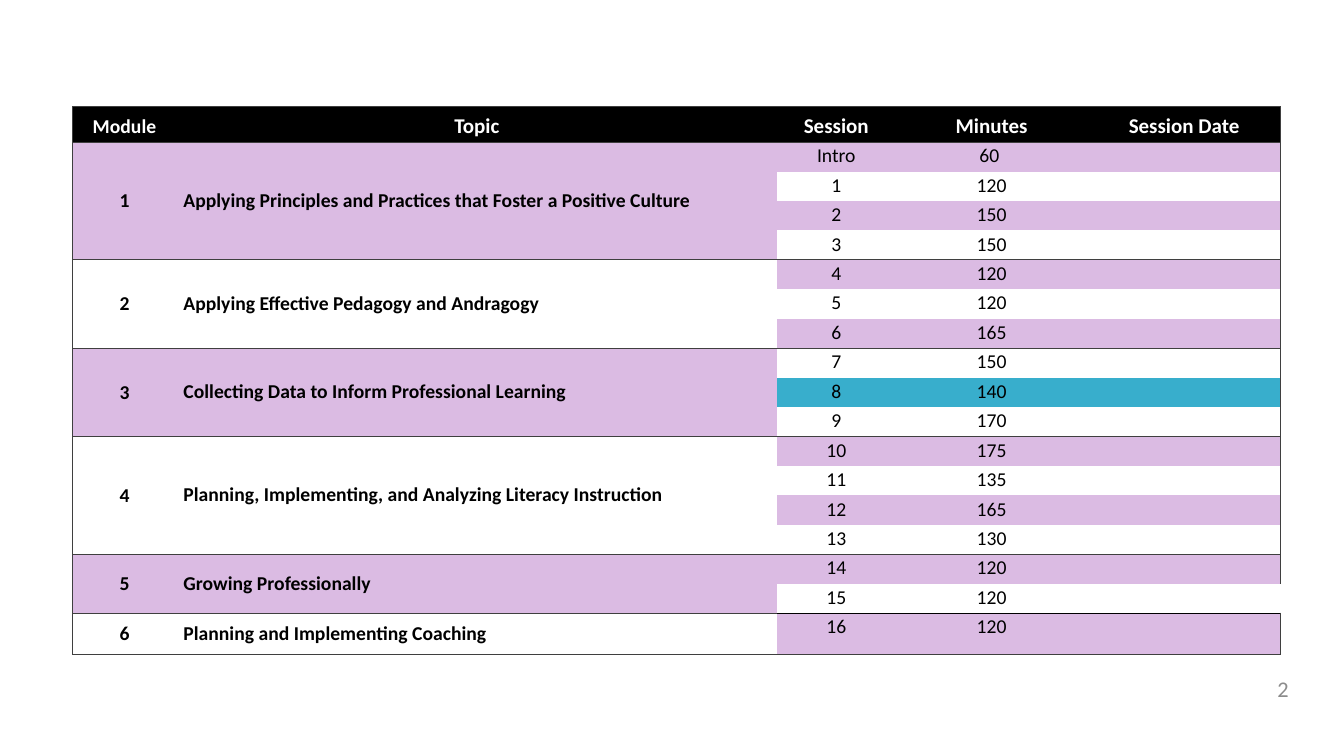
from dataclasses import dataclass

from lxml import etree
from pptx import Presentation
from pptx.dml.color import RGBColor
from pptx.enum.text import MSO_ANCHOR, PP_ALIGN
from pptx.oxml.ns import qn
from pptx.util import Inches, Pt

CENTER, LEFT, RIGHT = PP_ALIGN.CENTER, PP_ALIGN.LEFT, PP_ALIGN.RIGHT
TOP, MIDDLE, BOTTOM = MSO_ANCHOR.TOP, MSO_ANCHOR.MIDDLE, MSO_ANCHOR.BOTTOM

COLORS = {
    "black": "000000",
    "white": "FFFFFF",
    "lavender": "DBBBE3",
    "teal": "38AECC",
    "rule": "3F3F3F",
    "page_number": "8C8C8C",
}
FONT = "Calibri"
NO_STYLE = "{2D5ABB26-0587-4C30-8999-92F81FD0307C}"

TABLE_LEFT, TABLE_TOP, TABLE_HEIGHT = 0.72, 1.06, 5.44
COLUMN_WIDTHS = [1.03, 5.96, 1.17, 1.91, 1.91]
HEADER_HEIGHT, LAST_HEIGHT = 0.35, 0.41
HEADINGS = ["Module", "Topic", "Session", "Minutes", "Session Date"]
HIGHLIGHTED_SESSION = "8"


@dataclass
class Module:
    topic: str
    sessions: list[tuple[str, str]]


@dataclass
class CellStyle:
    fill: str
    color: str = "black"
    size: int = 14
    bold: bool = False
    align: PP_ALIGN = CENTER
    anchor: MSO_ANCHOR = TOP
    side: float = 0.06
    margin_top: float = 0.02
    margin_bottom: float = 0.03


MODULES = [
    Module("Applying Principles and Practices that Foster a Positive Culture",
           [("Intro", "60 "), ("1", "120"), ("2", "150"), ("3", "150")]),
    Module("Applying Effective Pedagogy and Andragogy",
           [("4", "120"), ("5", "120"), ("6", "165")]),
    Module("Collecting Data to Inform Professional Learning",
           [("7", "150"), ("8", "140"), ("9", "170")]),
    Module("Planning, Implementing, and Analyzing Literacy Instruction",
           [("10", "175"), ("11", "135"), ("12", "165"), ("13", "130")]),
    Module("Growing Professionally", [("14", "120"), ("15", "120")]),
    Module("Planning and Implementing Coaching", [("16", "120")]),
]


def rgb(name: str) -> RGBColor:
    return RGBColor.from_string(COLORS[name])


def format_span(span, size: int, color: str, bold: bool) -> None:
    for name, value in {"name": FONT, "size": Pt(size), "bold": bold}.items():
        setattr(span.font, name, value)
    span.font.color.rgb = rgb(color)


def set_borders(cell, edges: dict[str, str]) -> None:
    properties = cell._tc.get_or_add_tcPr()
    for edge in "LRTB":
        line = etree.SubElement(properties, qn(f"a:ln{edge}"), w=str(Pt(1)))
        if edge in edges:
            fill = etree.SubElement(line, qn("a:solidFill"))
            etree.SubElement(fill, qn("a:srgbClr"), val=COLORS[edges[edge]])
        else:
            etree.SubElement(line, qn("a:noFill"))


def fill_cell(cell, text: str, style: CellStyle, edges: dict[str, str]) -> None:
    set_borders(cell, edges)
    cell.fill.solid()
    cell.fill.fore_color.rgb = rgb(style.fill)
    layout = {
        "vertical_anchor": style.anchor,
        "margin_left": Inches(style.side),
        "margin_right": Inches(style.side),
        "margin_top": Inches(style.margin_top),
        "margin_bottom": Inches(style.margin_bottom),
    }
    for name, value in layout.items():
        setattr(cell, name, value)
    para = cell.text_frame.paragraphs[0]
    para.alignment = style.align
    if text:
        span = para.add_run()
        span.text = text
        format_span(span, style.size, style.color, style.bold)
    else:
        # Keeps an empty cell from stretching its row
        etree.SubElement(para._p, qn("a:endParaRPr"), sz=str(style.size * 100))


def frame_edges(column: int, first: bool, last: bool) -> dict[str, str]:
    present = {"L": column == 0, "R": column == len(HEADINGS) - 1, "T": first, "B": last}
    return {edge: "rule" for edge, shown in present.items() if shown}


def add_header(table) -> None:
    for column, heading in enumerate(HEADINGS):
        style = CellStyle("black", "white", 14 if column == 0 else 15, True, anchor=BOTTOM)
        fill_cell(table.cell(0, column), heading, style, frame_edges(column, True, True))


def add_module(table, number: int, module: Module, start: int) -> None:
    count = len(module.sessions)
    band = "lavender" if number in (1, 3, 5) else "white"
    label_styles = [
        CellStyle(band, bold=True, anchor=MIDDLE, side=0.07, margin_top=0, margin_bottom=0),
        CellStyle(band, bold=True, align=LEFT, anchor=MIDDLE, side=0.07),
    ]
    for offset, (session, minutes) in enumerate(module.sessions):
        row = start + offset
        first, last = offset == 0, offset == count - 1
        # Module number and topic
        labels = [str(number), module.topic] if first else ["", ""]
        for column, (text, style) in enumerate(zip(labels, label_styles)):
            edges = frame_edges(column, first, first or last)
            fill_cell(table.cell(row, column), text, style, edges)
        # Session details
        shade = "lavender" if row % 2 else "white"
        style = CellStyle("teal" if session == HIGHLIGHTED_SESSION else shade)
        for column, text in enumerate([session, minutes, ""], start=2):
            edges = frame_edges(column, first, last)
            if session == "15":
                edges = {"B": "black"}
            elif session == "16":
                edges["T"] = "black"
            fill_cell(table.cell(row, column), text, style, edges)
    if count > 1:
        for column in range(2):
            table.cell(start, column).merge(table.cell(start + count - 1, column))


def add_schedule(page) -> None:
    session_count = sum(len(module.sessions) for module in MODULES)
    frame = page.shapes.add_table(
        session_count + 1, len(HEADINGS), Inches(TABLE_LEFT), Inches(TABLE_TOP),
        Inches(sum(COLUMN_WIDTHS)), Inches(TABLE_HEIGHT))
    table = frame.table
    table.horz_banding = False
    for style_id in table._tbl.iter(qn("a:tableStyleId")):
        style_id.text = NO_STYLE

    # Column widths and row heights
    for column, width in zip(table.columns, COLUMN_WIDTHS):
        column.width = Inches(width)
    middle_count = session_count - 1
    row_height = (TABLE_HEIGHT - HEADER_HEIGHT - LAST_HEIGHT) / middle_count
    heights = [HEADER_HEIGHT] + [row_height] * middle_count + [LAST_HEIGHT]
    for row, height in zip(table.rows, heights):
        row.height = Inches(height)

    add_header(table)
    start = 1
    for number, module in enumerate(MODULES, start=1):
        add_module(table, number, module, start)
        start += len(module.sessions)


def add_page_number(page) -> None:
    box = page.shapes.add_textbox(Inches(10.55), Inches(6.68), Inches(2.33), Inches(0.3))
    box.text_frame.word_wrap = True
    box.text_frame.vertical_anchor = MIDDLE
    para = box.text_frame.paragraphs[0]
    para.alignment = RIGHT
    span = para.add_run()
    span.text = "2"
    format_span(span, 16, "page_number", False)


def main() -> None:
    deck = Presentation()
    deck.slide_width, deck.slide_height = Inches(13.33), Inches(7.5)
    page = deck.slides.add_slide(deck.slide_layouts[6])
    add_schedule(page)
    add_page_number(page)
    deck.save("out.pptx")


if __name__ == "__main__":
    main()
